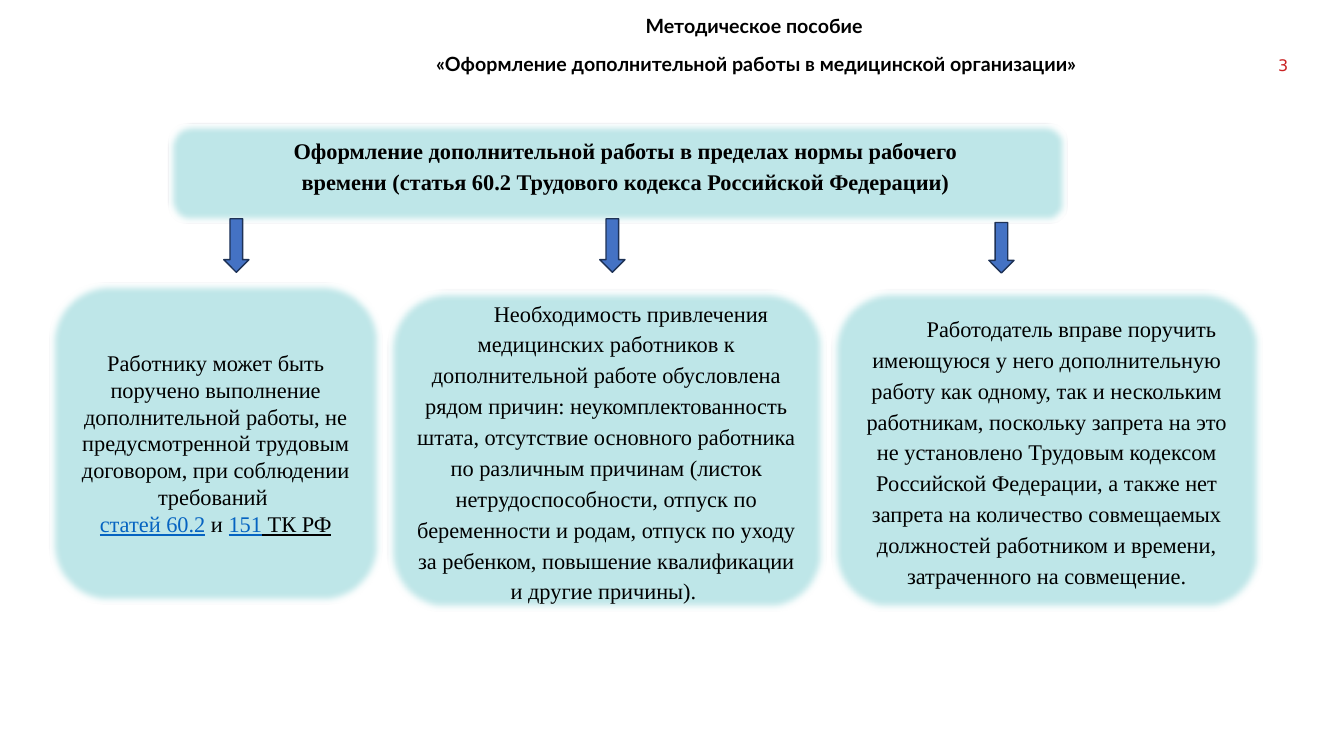
from lxml import etree
from pptx import Presentation
from pptx.dml.color import RGBColor
from pptx.enum import shapes, text
from pptx.oxml.ns import qn
from pptx.util import Pt

SERIF = "Times New Roman"
PANEL, ARROW, OUTLINE = "BEE6E8", "4472C4", "1E3256"
BLACK, LINK, NUMBER = "000000", "0563C1", "CA2324"

REASONS = (
    "Необходимость привлечения медицинских работников к дополнительной работе "
    "обусловлена рядом причин: неукомплектованность штата, отсутствие основного "
    "работника по различным причинам (листок нетрудоспособности, отпуск по "
    "беременности и родам, отпуск по уходу за ребенком, повышение квалификации "
    "и другие причины). ")
EMPLOYER_RIGHT = (
    "Работодатель вправе поручить имеющуюся у него дополнительную работу как "
    "одному, так и нескольким работникам, поскольку запрета на это не установлено "
    "Трудовым кодексом Российской Федерации, а также нет запрета на количество "
    "совмещаемых должностей работником и времени, затраченного на совмещение.")
ASSIGNMENT = (
    "Работнику может быть поручено выполнение дополнительной работы, не "
    "предусмотренной трудовым договором, при соблюдении требований ")
ARTICLES = [("статей 60.2", LINK, True), (" и ", BLACK, False),
            ("151", LINK, True), (" ТК РФ", BLACK, True)]


def colour(value):
    return RGBColor.from_string(value)


def write(frame, paragraphs, size=16, font=SERIF, bold=False,
          align=text.PP_ALIGN.CENTER, spacing=None, after=0, indent=0):
    """Each paragraph is a list of (wording, colour, underlined) runs."""
    frame.word_wrap = True
    for number, runs in enumerate(paragraphs):
        paragraph = frame.add_paragraph() if number else frame.paragraphs[0]
        if indent:
            properties = paragraph._p.get_or_add_pPr()
            properties.set("marL", "0")
            properties.set("indent", str(Pt(indent)))
        paragraph.alignment = align
        paragraph.space_after = Pt(after)
        if spacing:
            paragraph.line_spacing = spacing
        for wording, ink, underlined in runs:
            run = paragraph.add_run()
            run.text = wording
            run.font.name, run.font.size = font, Pt(size)
            run.font.bold, run.font.underline = bold, underlined
            run.font.color.rgb = colour(ink)


def add_label(slide, box, paragraphs, margin=None, **style):
    frame = slide.shapes.add_textbox(*map(Pt, box)).text_frame
    if margin is not None:
        frame.margin_left = frame.margin_right = Pt(margin)
        frame.margin_top = frame.margin_bottom = Pt(margin)
    write(frame, paragraphs, **style)


def add_figure(slide, kind, box, fill):
    figure = slide.shapes.add_shape(kind, *map(Pt, box))
    figure.shadow.inherit = False
    figure.fill.solid()
    figure.fill.fore_color.rgb = colour(fill)
    figure.line.color.rgb = colour(OUTLINE)
    figure.line.width = Pt(1)
    return figure


def add_panel(slide, box, paragraphs=(), **style):
    """Rounded panel with feathered edges."""
    panel = add_figure(slide, shapes.MSO_SHAPE.ROUNDED_RECTANGLE, box, PANEL)
    effects = panel._element.spPr.find(qn("a:effectLst"))
    etree.SubElement(effects, qn("a:softEdge"), rad=str(Pt(5)))
    panel.text_frame.vertical_anchor = text.MSO_ANCHOR.MIDDLE
    write(panel.text_frame, paragraphs, **style)


def plain(wording, ink=BLACK):
    return [(wording, ink, False)]


def main():
    deck = Presentation()
    deck.slide_width, deck.slide_height = Pt(960), Pt(540)
    slide = deck.slides.add_slide(deck.slide_layouts[6])

    add_label(slide, (897.8, 39.6, 22.3, 17.3), [plain("3", NUMBER)], margin=0,
              size=11.4, font="DejaVu Sans", align=text.PP_ALIGN.RIGHT)
    add_label(slide, (222.5, 6.5, 635.8, 51.1),
              [plain("Методическое пособие "),
               plain("«Оформление дополнительной работы в медицинской организации»")],
              size=14, font="Lato", bold=True, after=10)

    add_panel(slide, (120.2, 87.8, 641.5, 71.3))
    add_label(slide, (180.7, 91.4, 532.1, 50.4),
              [plain("Оформление дополнительной работы в пределах нормы рабочего "
                     "времени (статья 60.2 Трудового кодекса Российской Федерации)")],
              bold=True, spacing=1.15, after=10)

    add_panel(slide, (35.3, 201.6, 237.6, 229.7), [plain(ASSIGNMENT), ARTICLES])
    for left, width, wording in ((276.5, 313.2, REASONS),
                                 (594, 307.4, EMPLOYER_RIGHT)):
        add_panel(slide, (left, 206.6, width, 229.7), [plain(wording)],
                  spacing=1.15, after=10, indent=35.4)

    for left, top, height in ((428.4, 156.3, 38.2), (159.8, 156.3, 38.2),
                              (706.3, 159, 36)):
        add_figure(slide, shapes.MSO_SHAPE.DOWN_ARROW,
                   (left, top, 18, height), ARROW)

    deck.save("out.pptx")


if __name__ == "__main__":
    main()
